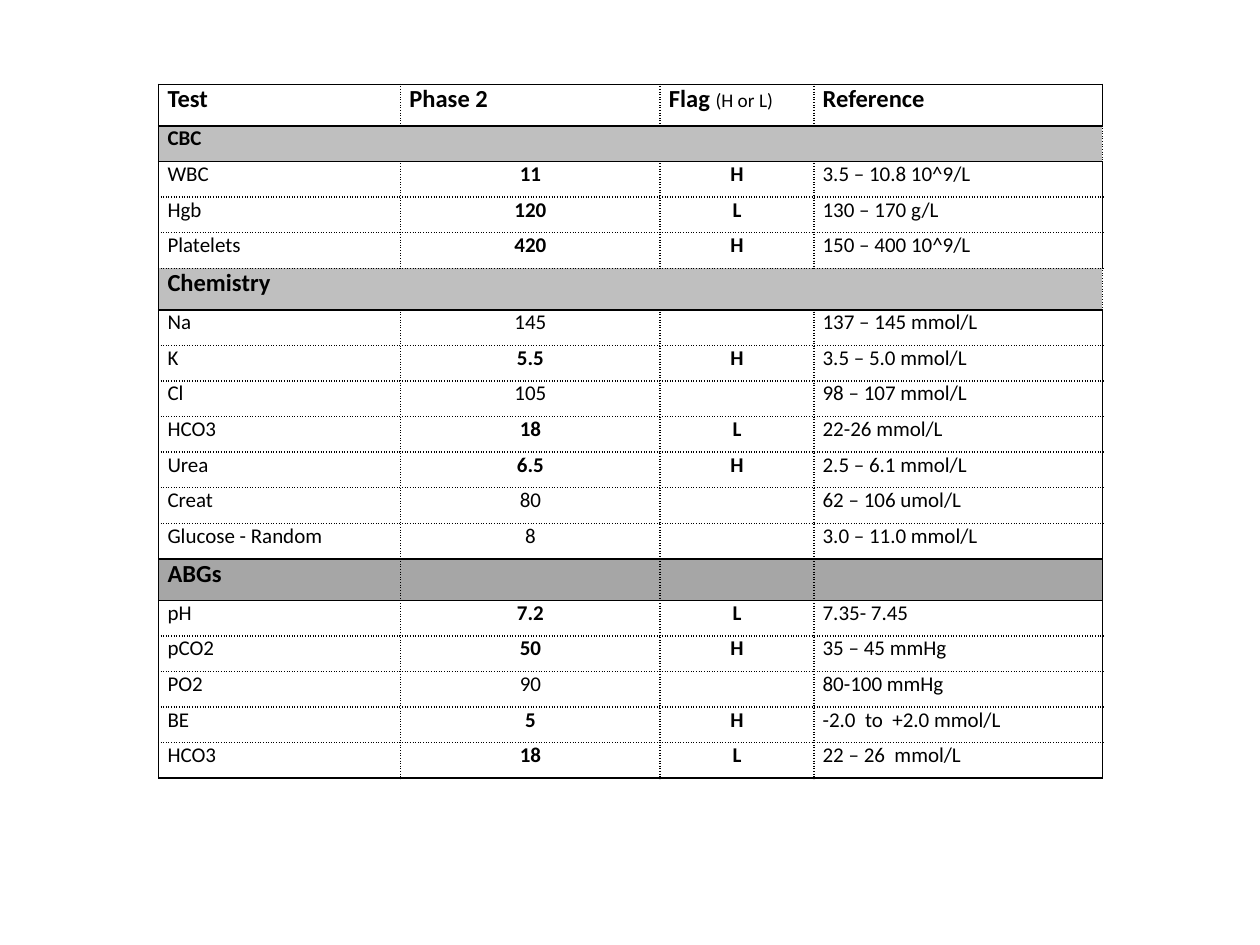
from dataclasses import dataclass

from lxml import etree
from pptx import Presentation
from pptx import util as u
from pptx.dml import color
from pptx.enum import text
from pptx.oxml import ns

PX = u.Inches(1) // 400


@dataclass(frozen=True)
class Theme:
    font: str = "Calibri"
    ink: str = "000000"
    paper: str = "FFFFFF"
    light_band: str = "BFBFBF"
    dark_band: str = "A6A6A6"
    heading: int = 14
    body: int = 12
    note: int = 11
    rule: int = 1


THEME = Theme()
COLUMN_WIDTHS = (768, 824, 488, 916)
ROW_HEIGHT, HEADING_HEIGHT = 113, 132
HEADINGS = (("Test", ""), ("Phase 2", ""), ("Flag ", "(H or L)"), ("Reference", ""))
PANELS = [
    ("CBC", THEME.body, THEME.light_band, True, [
        ("WBC", "11", "H", "3.5 – 10.8 10^9/L"),
        ("Hgb", "120", "L", "130 – 170 g/L"),
        ("Platelets", "420", "H", "150 – 400 10^9/L"),
    ]),
    ("Chemistry", THEME.heading, THEME.light_band, True, [
        ("Na", "145", "", "137 – 145 mmol/L"),
        ("K", "5.5", "H", "3.5 – 5.0 mmol/L"),
        ("Cl", "105", "", "98 – 107 mmol/L"),
        ("HCO3", "18", "L", "22-26 mmol/L"),
        ("Urea", "6.5", "H", "2.5 – 6.1 mmol/L"),
        ("Creat", "80", "", "62 – 106 umol/L"),
        ("Glucose - Random", "8", "", "3.0 – 11.0 mmol/L"),
    ]),
    ("ABGs", THEME.heading, THEME.dark_band, False, [
        ("pH", "7.2", "L", "7.35- 7.45"),
        ("pCO2", "50", "H", "35 – 45 mmHg"),
        ("PO2", "90", "", "80-100 mmHg"),
        ("BE", "5", "H", "-2.0  to  +2.0 mmol/L"),
        ("HCO3", "18", "L", "22 – 26  mmol/L"),
    ]),
]


class LabSlide:
    def __init__(self, deck, theme):
        self.theme = theme
        self.slide = deck.slides.add_slide(deck.slide_layouts[6])

    def table(self, left, top, widths, heights):
        frame = self.slide.shapes.add_table(
            len(heights), len(widths), left * PX, top * PX,
            sum(widths) * PX, sum(heights) * PX)
        grid = frame.table
        grid.first_row = grid.horz_banding = False
        for column, width in zip(grid.columns, widths):
            column.width = width * PX
        for row, height in zip(grid.rows, heights):
            row.height = height * PX
        return grid

    def border(self, cell, side, solid):
        properties = cell._tc.get_or_add_tcPr()
        line = etree.SubElement(properties, ns.qn(f"a:ln{side}"),
                                w=str(u.Pt(self.theme.rule)))
        fill = etree.SubElement(line, ns.qn("a:solidFill"))
        etree.SubElement(fill, ns.qn("a:srgbClr"), val=self.theme.ink)
        etree.SubElement(line, ns.qn("a:prstDash"), val="solid" if solid else "dot")

    def cell(self, cell, runs, fill=None, centred=False):
        cell.margin_left = cell.margin_right = u.Inches(0.07)
        cell.margin_top = cell.margin_bottom = 0
        if fill:
            cell.fill.solid()
            cell.fill.fore_color.rgb = color.RGBColor.from_string(fill)
        else:
            cell.fill.background()
        paragraph = cell.text_frame.paragraphs[0]
        if centred:
            paragraph.alignment = text.PP_ALIGN.CENTER
        for words, size, bold in runs:
            if words:
                run = paragraph.add_run()
                run.text = words
                run.font.name = self.theme.font
                run.font.size = u.Pt(size)
                run.font.bold = bold
                run.font.color.rgb = color.RGBColor.from_string(self.theme.ink)
        etree.SubElement(paragraph._p, ns.qn("a:endParaRPr"),
                         sz=str(self.theme.body * 100))


def main():
    deck = Presentation()
    deck.slide_width, deck.slide_height = 4000 * PX, 3000 * PX
    page = LabSlide(deck, THEME)

    heights, solid_below = [HEADING_HEIGHT], [True]
    for name, size, band, merged, results in PANELS:
        solid_below[-1] = solid_below[-1] or not merged
        heights.append(HEADING_HEIGHT if size == THEME.heading else ROW_HEIGHT)
        heights += [ROW_HEIGHT] * len(results)
        solid_below += [True] + [False] * len(results)
    solid_below[-1] = True

    labs = page.table(504, 268, COLUMN_WIDTHS, heights)
    last = len(COLUMN_WIDTHS) - 1
    for r, below in enumerate(solid_below):
        for c in range(last + 1):
            cell = labs.cell(r, c)
            page.border(cell, "L", c == 0)
            page.border(cell, "R", c == last)
            page.border(cell, "T", r == 0 or solid_below[r - 1])
            page.border(cell, "B", below)

    for c, (heading, note) in enumerate(HEADINGS):
        page.cell(labs.cell(0, c), [(heading, THEME.heading, True),
                                    (note, THEME.note, False)], THEME.paper)
    r = 1
    for name, size, band, merged, results in PANELS:
        for c in range(last + 1):
            title = name if c == 0 else ""
            page.cell(labs.cell(r, c), [(title, size, True)], band)
        if merged:
            labs.cell(r, 0).merge(labs.cell(r, last))
        for r, result in enumerate(results, r + 1):
            flagged = bool(result[2])
            for c, words in enumerate(result):
                measured = c in (1, 2)
                page.cell(labs.cell(r, c),
                          [(words, THEME.body, measured and flagged)],
                          centred=measured)
        r += 1
    deck.save("out.pptx")


if __name__ == "__main__":
    main()
